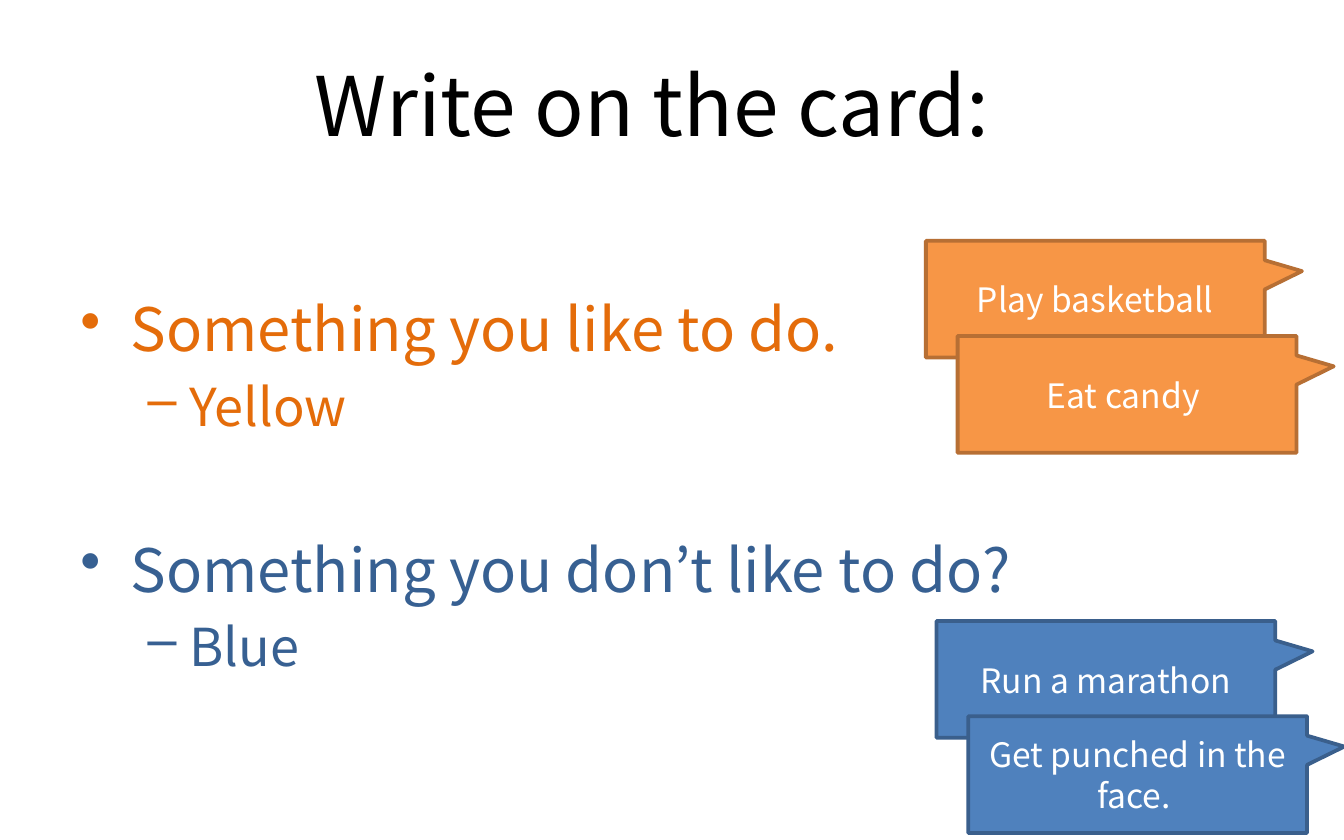
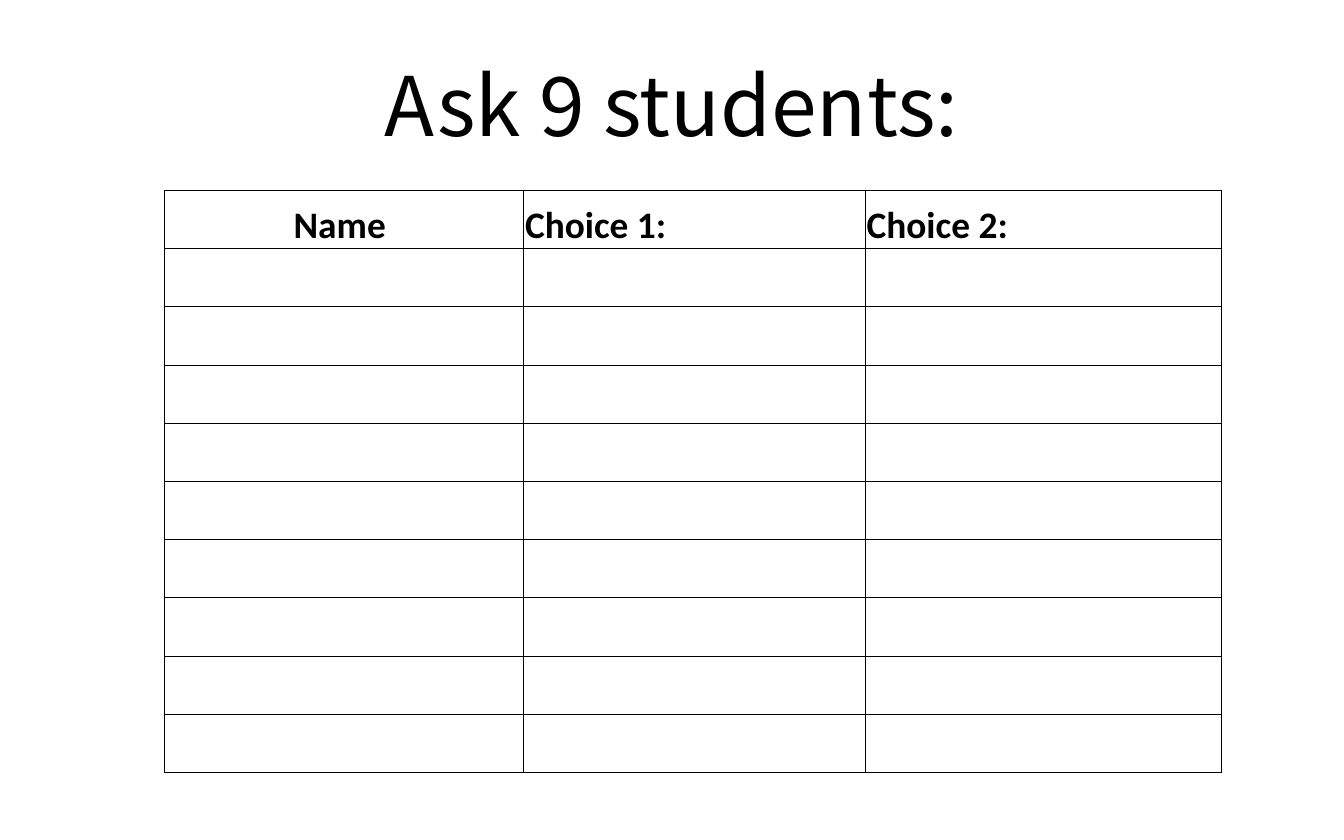
from lxml import etree
from pptx import Presentation
from pptx.dml.color import RGBColor
from pptx.enum import shapes, text
from pptx.oxml import ns
from pptx.util import Pt

FONT, TABLE_FONT = "Noto Sans CJK KR", "Calibri"
BLACK, WHITE = "000000", "FFFFFF"
ORANGE_TEXT, ORANGE_FILL, ORANGE_LINE = "E46C0A", "F79646", "B76F34"
BLUE_TEXT, BLUE_FILL, BLUE_LINE = "376092", "4F81BD", "3A5F8C"


def set_font(font, name, size, color, bold=False):
    font.name = name
    font.size = Pt(size)
    font.bold = bold
    font.color.rgb = RGBColor.from_string(color)


def add_titled_slide(title):
    slide = presentation.slides.add_slide(presentation.slide_layouts[5])
    shape = slide.shapes.title
    shape.left, shape.top, shape.width, shape.height = Pt(36), Pt(18), Pt(648), Pt(75)
    frame = shape.text_frame
    frame.text = title
    frame.vertical_anchor = text.MSO_ANCHOR.MIDDLE
    frame.paragraphs[0].alignment = text.PP_ALIGN.CENTER
    set_font(frame.paragraphs[0].font, FONT, 44, BLACK)
    return slide


presentation = Presentation()
presentation.slide_width, presentation.slide_height = Pt(720), Pt(450)

# Slide 1: what to write on the card
slide = add_titled_slide("Write on the card:")
slide.shapes.title.text_frame.margin_right = Pt(28.6)

# Bulleted prompts: text, level, colour, space before
prompts = [
    ("Something you like to do.", 0, ORANGE_TEXT, 0),
    ("Yellow", 1, ORANGE_TEXT, 5),
    ("Something you don’t like to do?", 0, BLUE_TEXT, 50.7),
    ("Blue", 1, BLUE_TEXT, 5),
]
# For each level: bullet, size, line height, left margin, hanging indent
levels = [("•", 32, 39, 27, -27), ("–", 28, 34, 58.5, -22.5)]

body = slide.shapes.add_textbox(Pt(36), Pt(105), Pt(648), Pt(297))
frame = body.text_frame
frame.word_wrap = True
frame.margin_top = Pt(51)
for index, (prompt, level, color, space) in enumerate(prompts):
    bullet, size, line_height, margin, indent = levels[level]
    paragraph = frame.paragraphs[0] if index == 0 else frame.add_paragraph()
    paragraph.text = prompt
    paragraph.level = level
    paragraph.line_spacing = Pt(line_height)
    paragraph.space_before = Pt(space)
    set_font(paragraph.font, FONT, size, color)
    properties = paragraph._p.get_or_add_pPr()
    properties.set("marL", str(Pt(margin)))
    properties.set("indent", str(Pt(indent)))
    mark = etree.Element(ns.qn("a:buChar"), char=bullet)
    properties.find(ns.qn("a:spcBef")).addnext(mark)

# Two stacks of example callouts
stacks = [
    (496, 129, ORANGE_FILL, ORANGE_LINE, ["Play basketball", "Eat candy "]),
    (501.7, 332.7, BLUE_FILL, BLUE_LINE, ["Run a marathon", "Get punched in the face. "]),
]
for left, top, fill, line, examples in stacks:
    for step, example in enumerate(examples):
        callout = slide.shapes.add_shape(
            shapes.MSO_SHAPE.RECTANGULAR_CALLOUT,
            Pt(left + 17 * step), Pt(top + 51 * step), Pt(181.5), Pt(62.6))
        callout.adjustments[0], callout.adjustments[1] = 0.61, -0.24
        callout.shadow.inherit = False
        callout.fill.solid()
        callout.fill.fore_color.rgb = RGBColor.from_string(fill)
        callout.line.color.rgb = RGBColor.from_string(line)
        callout.line.width = Pt(2)
        frame = callout.text_frame
        frame.text = example
        frame.word_wrap = True
        frame.vertical_anchor = text.MSO_ANCHOR.MIDDLE
        paragraph = frame.paragraphs[0]
        paragraph.alignment = text.PP_ALIGN.CENTER
        paragraph.line_spacing = Pt(22)
        set_font(paragraph.font, FONT, 18, WHITE)

# Slide 2: survey table
slide = add_titled_slide("Ask 9 students:")
headings = ["Name ", "Choice 1:", "Choice 2:"]
column_widths = [192.6, 183, 191]
row_count, row_height = 10, 31.2
table = slide.shapes.add_table(
    row_count, len(headings), Pt(88), Pt(102),
    Pt(sum(column_widths)), Pt(row_count * row_height)).table
table.first_row = table.horz_banding = False
for column, width in zip(table.columns, column_widths):
    column.width = Pt(width)
for row in table.rows:
    row.height = Pt(row_height)

# Thin black grid without fill
for cell in table.iter_cells():
    cell.margin_left = cell.margin_right = cell.margin_top = Pt(0.7)
    cell.margin_bottom = 0
    cell.vertical_anchor = text.MSO_ANCHOR.BOTTOM
    properties = cell._tc.get_or_add_tcPr()
    for side in ("lnL", "lnR", "lnT", "lnB"):
        border = etree.SubElement(properties, ns.qn("a:" + side), w=str(Pt(0.5)))
        solid = etree.SubElement(border, ns.qn("a:solidFill"))
        etree.SubElement(solid, ns.qn("a:srgbClr"), val=BLACK)
    cell.fill.background()

# Heading row
for index, heading in enumerate(headings):
    cell = table.cell(0, index)
    cell.text = heading
    paragraph = cell.text_frame.paragraphs[0]
    paragraph.alignment = text.PP_ALIGN.CENTER if index == 0 else text.PP_ALIGN.LEFT
    set_font(paragraph.font, TABLE_FONT, 20, BLACK, bold=True)

presentation.save("out.pptx")
